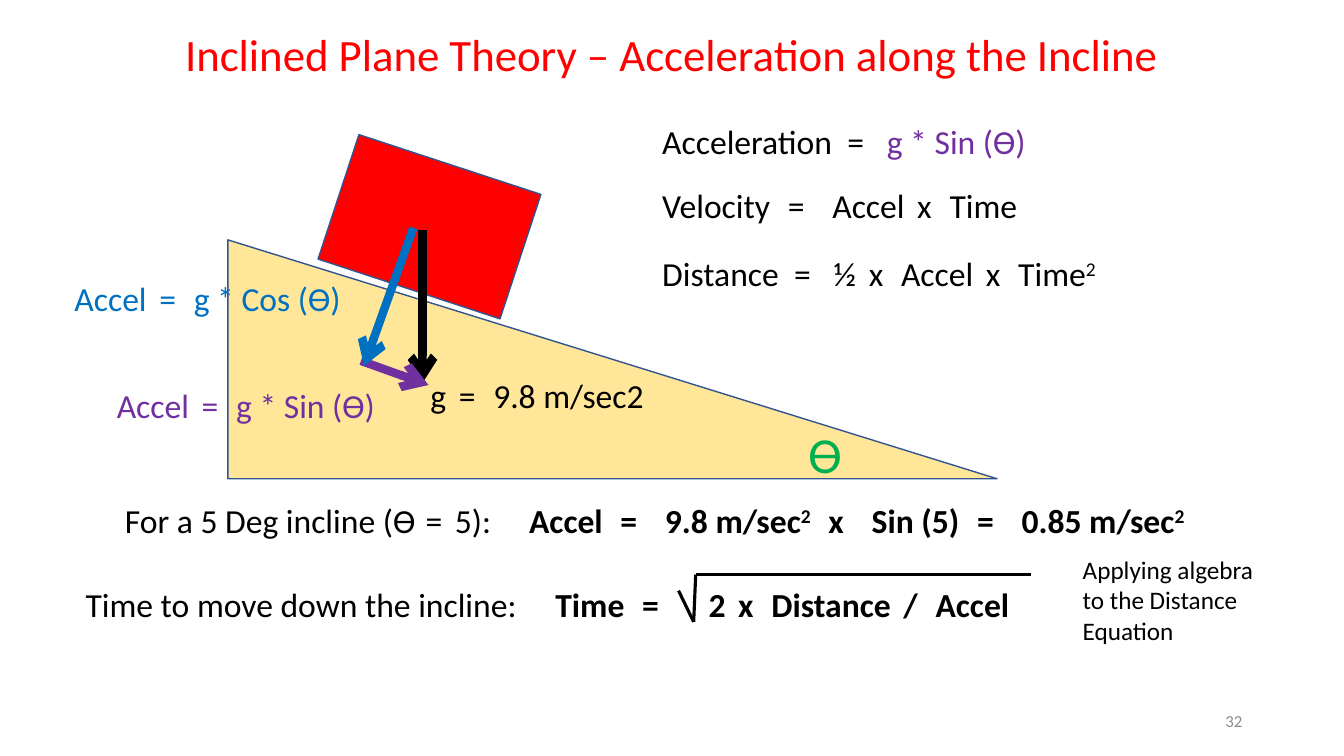
from itertools import groupby

from lxml import etree
from pptx import Presentation
from pptx.dml.color import RGBColor
from pptx.enum.shapes import MSO_CONNECTOR, MSO_SHAPE
from pptx.enum.text import MSO_ANCHOR, PP_ALIGN
from pptx.oxml.ns import qn
from pptx.util import Inches, Pt

STRAIGHT = MSO_CONNECTOR.STRAIGHT
RIGHT_TRIANGLE = MSO_SHAPE.RIGHT_TRIANGLE
RECTANGLE = MSO_SHAPE.RECTANGLE
MIDDLE = MSO_ANCHOR.MIDDLE
TOP = MSO_ANCHOR.TOP
LEFT, CENTER, RIGHT = PP_ALIGN.LEFT, PP_ALIGN.CENTER, PP_ALIGN.RIGHT

FONT = "Calibri"
BLACK, RED, GREEN, GRAY = "000000", "FF0000", "00B050", "8C8C8C"
SINE_PURPLE, COSINE_BLUE = "7030A0", "0070C0"
SAND, OUTLINE = "FFE699", "325491"
OPERATORS = ("=", "x", "/")
NARROW, MEDIUM, WIDE = 3.6, 5.4, 7.2  # points of tracking around an operator
LINE_HEIGHT = 0.5


def rgb(value):
    return RGBColor.from_string(value)


def add_run(paragraph, text, size=24, color=BLACK, bold=False, raised=False, tracking=0):
    run = paragraph.add_run()
    run.text = text
    run.font.name = FONT
    run.font.size = Pt(size)
    run.font.bold = bold
    run.font.color.rgb = rgb(color)
    properties = run.font._element
    if raised:
        properties.set("baseline", "30000")
    if tracking:
        properties.set("spc", str(round(tracking * 100)))


def add_equation(paragraph, text, equals=NARROW, times=NARROW, **style):
    """Add the text with tracked-out runs for its operators."""
    for is_operator, words in groupby(text.split(" "), lambda word: word in OPERATORS):
        chunk = " ".join(words)
        if is_operator:
            tracking = equals if chunk == "=" else times
            add_run(paragraph, f" {chunk} ", tracking=tracking, **style)
        else:
            add_run(paragraph, chunk, **style)


def add_text_area(slide, left, top, width, height=LINE_HEIGHT, align=LEFT, anchor=TOP):
    """Add a wrapping text box and return its first paragraph."""
    area = slide.shapes.add_textbox(Inches(left), Inches(top), Inches(width), Inches(height))
    frame = area.text_frame
    frame.word_wrap = True
    frame.vertical_anchor = anchor
    paragraph = frame.paragraphs[0]
    paragraph.alignment = align
    return paragraph


def set_tabs(paragraph, *positions):
    tabs = etree.SubElement(paragraph._p.get_or_add_pPr(), qn("a:tabLst"))
    for position in positions:
        etree.SubElement(tabs, qn("a:tab"), pos=str(Inches(position)), algn="l")


def add_line(slide, start, end, color=BLACK, weight=2.25, arrow=False):
    line = slide.shapes.add_connector(STRAIGHT, *(Inches(value) for value in start + end))
    line.line.color.rgb = rgb(color)
    line.line.width = Pt(weight)
    if arrow:
        etree.SubElement(line.line._get_or_add_ln(), qn("a:tailEnd"), type="arrow")
    etree.SubElement(line._element.spPr, qn("a:effectLst"))


def add_solid(slide, kind, left, top, width, height, fill, rotation=0):
    solid = slide.shapes.add_shape(
        kind, Inches(left), Inches(top), Inches(width), Inches(height))
    solid.rotation = rotation
    solid.shadow.inherit = False
    solid.fill.solid()
    solid.fill.fore_color.rgb = rgb(fill)
    solid.line.color.rgb = rgb(OUTLINE)
    solid.line.width = Pt(1)


def add_title(slide, left, top, width, height):
    title = add_text_area(slide, left, top, width, height, CENTER)
    add_run(title, "Inclined Plane Theory – Acceleration along the Incline", 32, RED)


def add_incline_diagram(slide, left, top, width, height):
    """Draw the wedge in the given box, with the block and its vectors on it."""
    add_solid(slide, RIGHT_TRIANGLE, left, top, width, height, SAND)
    add_solid(slide, RECTANGLE, left + 1.05, top - 0.78, 1.9, 1.3, RED, 18.2)
    vectors = (
        ((1.93, -0.1), (1.93, 1.42), (1.91, 1.29), 2.38, "g = 9.8 m/sec2", BLACK),
        ((1.32, 1.2), (1.99, 1.44), (-1.2, 1.39), 3.49, "Accel = g * Sin (ϴ)", SINE_PURPLE),
        ((1.84, -0.12), (1.35, 1.25), (-1.62, 0.33), 3.49, "Accel = g * Cos (ϴ)", COSINE_BLUE),
    )
    for start, end, label_at, label_width, label, color in vectors:
        add_line(slide, (left + start[0], top + start[1]), (left + end[0], top + end[1]),
                 color, 6, arrow=True)
        caption = add_text_area(slide, left + label_at[0], top + label_at[1], label_width)
        add_equation(caption, label, color=color)
    angle = add_text_area(slide, left + 5.66, top + 1.77, 0.68, 0.71)
    add_run(angle, "ϴ", 36, GREEN)


def add_motion_equations(slide, left, top, width):
    acceleration = add_text_area(slide, left, top, width)
    add_equation(acceleration, "Acceleration =", equals=MEDIUM)
    add_run(acceleration, "g * Sin (ϴ)", color=SINE_PURPLE)

    velocity = add_text_area(slide, left, top + 0.64, width)
    add_equation(velocity, "Velocity = Accel x Time", equals=WIDE)

    distance = add_text_area(slide, left, top + 1.31, width)
    add_equation(distance, "Distance = ½ x Accel x Time", equals=MEDIUM)
    add_run(distance, "2", raised=True)


def add_worked_example(slide, left, top, width):
    example = add_text_area(slide, left, top, width)
    set_tabs(example, 4.01)
    add_equation(example, "For a 5 Deg incline (ϴ = 5):\t", equals=1.8)
    for part in ("Accel = 9.8 m/sec", "x Sin (5) = 0.85 m/sec"):
        add_equation(example, part, equals=WIDE, times=WIDE, bold=True)
        add_run(example, "2", bold=True, raised=True)


def add_travel_time(slide, left, top, width):
    """Place the time formula, its root sign and the remark beside it."""
    formula = add_text_area(slide, left, top, width)
    set_tabs(formula, 4.66, 6.18)
    add_run(formula, "Time to move down the incline:\t")
    add_equation(formula, "Time =", equals=WIDE, bold=True)
    add_equation(formula, "\t2 x Distance / Accel", bold=True)

    root_sign = ((5.98, 0.12), (6.13, 0.43), (6.15, -0.04), (9.48, -0.04))
    corners = [(left + x, top + y) for x, y in root_sign]
    for start, end in zip(corners, corners[1:]):
        add_line(slide, start, end)

    remark = add_text_area(slide, left + 9.89, top - 0.29, 1.99, 1.01)
    add_run(remark, "Applying algebra to the Distance Equation", 18)


def add_slide_number(slide, left, top, width, height):
    number = add_text_area(slide, left, top, width, height, RIGHT, MIDDLE)
    add_run(number, "32", 12, GRAY)


def main():
    presentation = Presentation()
    presentation.slide_width = Inches(13.33)
    presentation.slide_height = Inches(7.5)
    slide = presentation.slides.add_slide(presentation.slide_layouts[6])
    add_incline_diagram(slide, 2.26, 2.38, 7.63, 2.37)
    add_worked_example(slide, 1.14, 4.91, 11.44)
    add_title(slide, 1.54, 0.22, 10.25, 0.64)
    add_motion_equations(slide, 6.47, 1.15, 4.76)
    add_travel_time(slide, 0.75, 5.74, 9.46)
    add_slide_number(slide, 9.42, 6.95, 3, 0.4)
    presentation.save("out.pptx")


if __name__ == "__main__":
    main()
